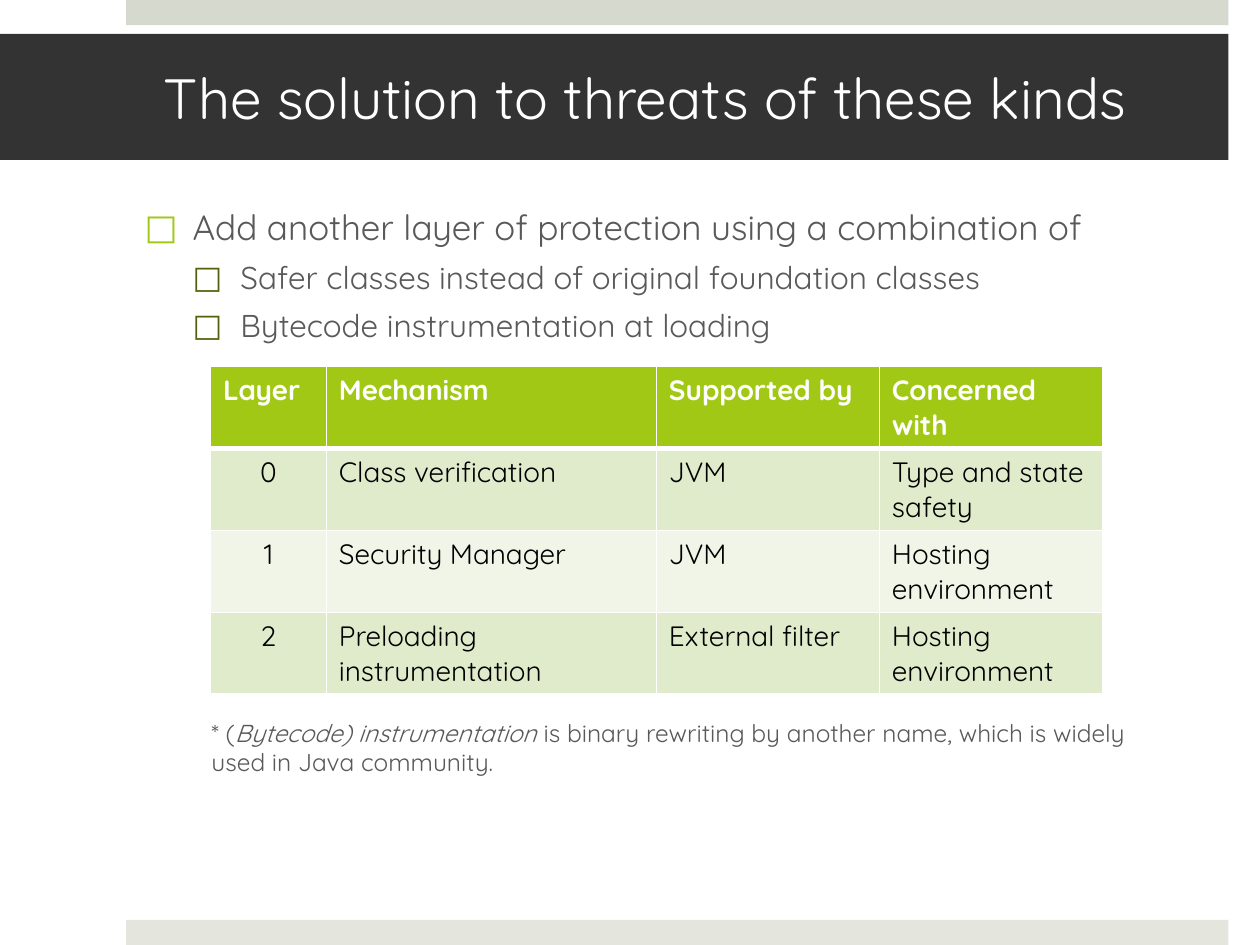
from lxml.etree import SubElement
from pptx import Presentation
from pptx.dml.color import RGBColor
from pptx.enum.shapes import MSO_SHAPE
from pptx.enum.text import MSO_ANCHOR, PP_ALIGN
from pptx.oxml.ns import qn
from pptx.util import Inches, Pt


def color(value):
    return RGBColor.from_string(value)


def set_font(paragraph, size, value, bold=False):
    paragraph.font.name = "Quicksand"
    paragraph.font.size = Pt(size)
    paragraph.font.color.rgb = color(value)
    paragraph.font.bold = bold


presentation = Presentation()
presentation.slide_width = Inches(10)
presentation.slide_height = Inches(7.5)
slide = presentation.slides.add_slide(presentation.slide_layouts[6])

bands = [
    (1, 0, 8.75, 0.2, "D6D9CD"),
    (1, 7.3, 8.75, 0.2, "E4E6DE"),
    (0, 0.27, 9.75, 1, "333333"),
]
for left, top, width, height, fill in bands:
    shape = slide.shapes.add_shape(
        MSO_SHAPE.RECTANGLE, Inches(left), Inches(top), Inches(width), Inches(height)
    )
    shape.shadow.inherit = False
    shape.fill.solid()
    shape.fill.fore_color.rgb = color(fill)
    shape.line.fill.background()

title = shape.text_frame
title.word_wrap = True
title.vertical_anchor = MSO_ANCHOR.MIDDLE
title.margin_left = Inches(1.3)
title.margin_right = Inches(0.3)
title.text = "The solution to threats of these kinds"
title.paragraphs[0].alignment = PP_ALIGN.LEFT
set_font(title.paragraphs[0], 32.4, "FFFFFF")

body = slide.shapes.add_textbox(
    Inches(1.05), Inches(1.58), Inches(8.7), Inches(1.3)
).text_frame
body.word_wrap = True
bullets = [
    (0, "Add another layer of protection using a combination of", 20, "A2C816"),
    (1, "Safer classes instead of original foundation classes", 18, "51640B"),
    (1, "Bytecode instrumentation at loading", 18, "51640B"),
]
body.text = "\n".join(text for level, text, size, bullet_color in bullets)
for paragraph, (level, text, size, bullet_color) in zip(body.paragraphs, bullets):
    paragraph.level = level
    paragraph.space_before = Pt(6 * level)
    set_font(paragraph, size, "595959")
    properties = paragraph._p.get_or_add_pPr()
    properties.set("marL", str(Inches(0.38 * (level + 1))))
    properties.set("indent", str(Inches(-0.38)))
    bullet_fill = SubElement(properties, qn("a:buClr"))
    SubElement(bullet_fill, qn("a:srgbClr"), val=bullet_color)
    SubElement(properties, qn("a:buFont"), typeface="Quicksand")
    SubElement(properties, qn("a:buChar"), char="□")
    properties.append(properties.find(qn("a:defRPr")))

rows = [
    ("Layer", "Mechanism", "Supported by", "Concerned with"),
    ("0", "Class verification", "JVM", "Type and state safety"),
    ("1", "Security Manager", "JVM", "Hosting environment"),
    ("2", "Preloading instrumentation", "External filter", "Hosting environment"),
]
row_fills = ["A2C816", "E0EBCC", "F0F5E8", "E0EBCC"]
table = slide.shapes.add_table(
    4, 4, Inches(1.67), Inches(2.91), Inches(7.08), Inches(2.6)
).table
for column, width in zip(table.columns, [0.92, 2.62, 1.77, 1.77]):
    column.width = Inches(width)

for row_index, (row, fill) in enumerate(zip(rows, row_fills)):
    header = row_index == 0
    for column_index, text in enumerate(row):
        cell = table.cell(row_index, column_index)
        cell.text = text
        paragraph = cell.text_frame.paragraphs[0]
        set_font(paragraph, 16, "FFFFFF" if header else "000000", header)
        if column_index == 0 and not header:
            paragraph.alignment = PP_ALIGN.CENTER
        widths = {"L": 1, "R": 1, "T": 3 if row_index == 1 else 1, "B": 3 if header else 1}
        for side, width in widths.items():
            border = SubElement(
                cell._tc.get_or_add_tcPr(), qn("a:ln" + side), w=str(Pt(width))
            )
            border_fill = SubElement(border, qn("a:solidFill"))
            SubElement(border_fill, qn("a:srgbClr"), val="FFFFFF")
        cell.fill.solid()
        cell.fill.fore_color.rgb = color(fill)

footnote = slide.shapes.add_textbox(
    Inches(1.58), Inches(5.65), Inches(7.6), Inches(0.6)
).text_frame
footnote.word_wrap = True
paragraph = footnote.paragraphs[0]
set_font(paragraph, 14, "595959")
for text, italic in [
    ("* (", False),
    ("Bytecode) instrumentation ", True),
    ("is binary rewriting by another name, which is widely used in Java community.", False),
]:
    run = paragraph.add_run()
    run.text = text
    run.font.italic = italic

presentation.save("out.pptx")
